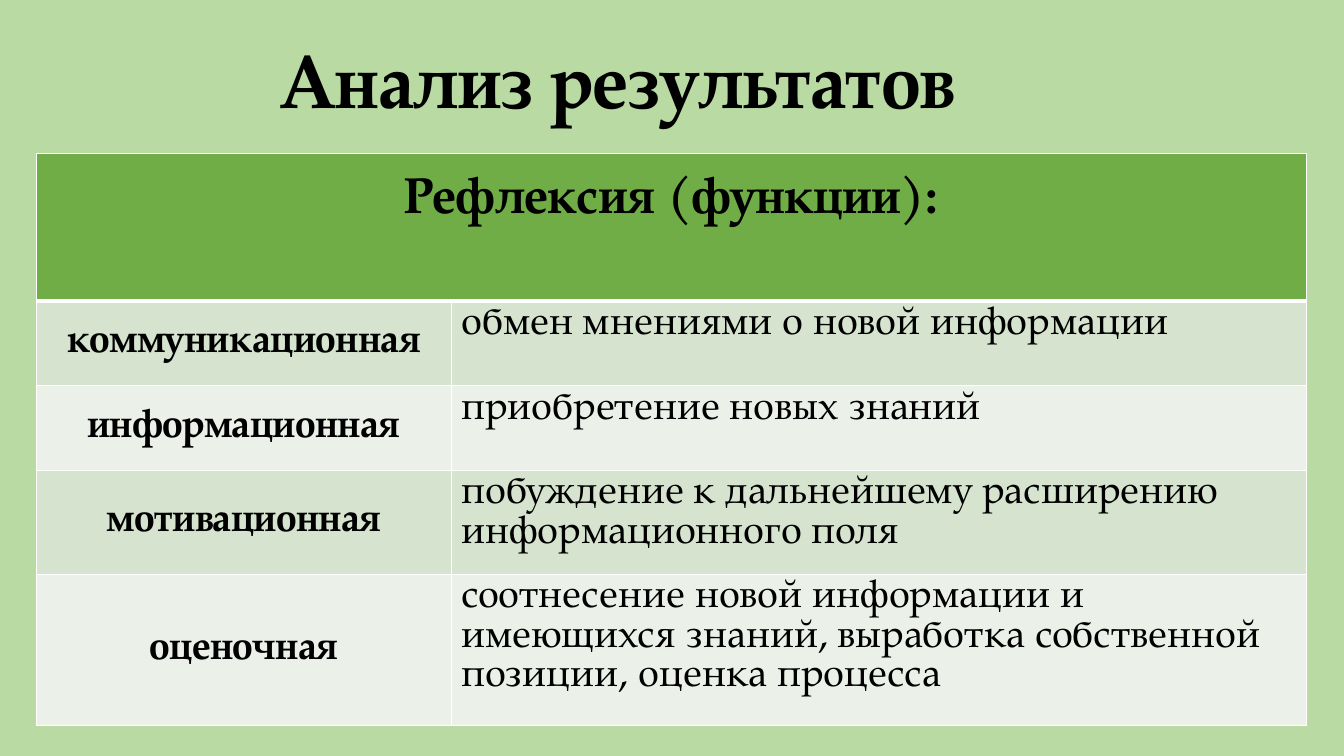
from dataclasses import dataclass

from lxml.etree import SubElement as Sub
from pptx import Presentation
from pptx.dml.color import RGBColor as Rgb
from pptx.enum.text import MSO_ANCHOR as Anchor, PP_ALIGN as Align
from pptx.oxml.ns import qn
from pptx.util import Cm, Pt


@dataclass(frozen=True)
class Theme:
    """Colours, font and type sizes of the slide."""
    font: str = "TeX Gyre Pagella"
    back: str = "B9DAA3"
    ink: str = "000000"
    line: str = "FFFFFF"
    head: str = "70AD47"
    bands: tuple = ("D5E3CF", "EBF1E9")
    title: int = 54
    lead: int = 36
    body: int = 28


THEME = Theme()
TITLE = "Анализ результатов "
HEAD = "Рефлексия (функции):"
ROWS = (
    ("коммуникационная", "обмен мнениями о новой информации"),
    ("информационная", "приобретение новых знаний"),
    ("мотивационная", "побуждение к дальнейшему расширению информационного поля"),
    ("оценочная", "соотнесение новой информации и имеющихся знаний, "
                  "выработка собственной позиции, оценка процесса"),
)


def write(frame, text, size=THEME.body, bold=False, align=Align.LEFT, space=None):
    """Put formatted text into a text frame."""
    para = frame.paragraphs[0]
    para.alignment = align
    para.line_spacing = space
    run = para.add_run()
    run.text = text
    font = run.font
    font.name, font.size, font.bold = THEME.font, Pt(size), bold
    font.color.rgb = Rgb.from_string(THEME.ink)


def paint(cell, fill, top=1, base=1):
    """Give a cell its borders and fill."""
    props = cell._tc.get_or_add_tcPr()
    for side, width in zip("LRTB", (1, 1, top, base)):
        edge = Sub(props, qn(f"a:ln{side}"), w=str(Pt(width)))
        solid = Sub(edge, qn("a:solidFill"))
        Sub(solid, qn("a:srgbClr"), val=THEME.line)
    cell.fill.solid()
    cell.fill.fore_color.rgb = Rgb.from_string(fill)


def add_title(slide, left, top, width, height):
    """Place the title in its box."""
    frame = slide.shapes.add_textbox(left, top, width, height).text_frame
    frame.word_wrap = True
    frame.vertical_anchor = Anchor.MIDDLE
    write(frame, TITLE, size=THEME.title, bold=True, align=Align.CENTER, space=0.9)


def add_grid(slide, left, top, width, height):
    """Place the table of functions in its box."""
    grid = slide.shapes.add_table(len(ROWS) + 1, 2, left, top, width, height).table
    grid.columns[0].width = Cm(10.46)
    grid.columns[1].width = width - Cm(10.46)
    for row, tall in zip(grid.rows, (3.73, 2.13, 2.13, 2.13, 3.2)):
        row.height = Cm(tall)
    head = grid.cell(0, 0)
    head.merge(grid.cell(0, 1))
    for cell in grid.rows[0].cells:
        paint(cell, THEME.head, base=3)
    head.vertical_anchor = Anchor.MIDDLE
    head.margin_bottom = Cm(1.4)
    write(head.text_frame, HEAD, size=THEME.lead, bold=True, align=Align.CENTER)
    for num, (name, note) in enumerate(ROWS, 1):
        term, text = grid.rows[num].cells
        for cell in (term, text):
            paint(cell, THEME.bands[(num - 1) % 2], top=3 if num == 1 else 1)
        term.vertical_anchor = Anchor.MIDDLE
        write(term.text_frame, name, bold=True, align=Align.CENTER)
        write(text.text_frame, note)


def main():
    """Build and save the slide."""
    deck = Presentation()
    deck.slide_width, deck.slide_height = Cm(33.87), Cm(19.05)
    slide = deck.slides.add_slide(deck.slide_layouts[6])
    back = slide.background.fill
    back.solid()
    back.fore_color.rgb = Rgb.from_string(THEME.back)
    add_title(slide, Cm(5.44), Cm(1.19), Cm(20.75), Cm(1.83))
    add_grid(slide, Cm(0.91), Cm(3.86), Cm(32.02), Cm(13.32))
    deck.save("out.pptx")


if __name__ == "__main__":
    main()
